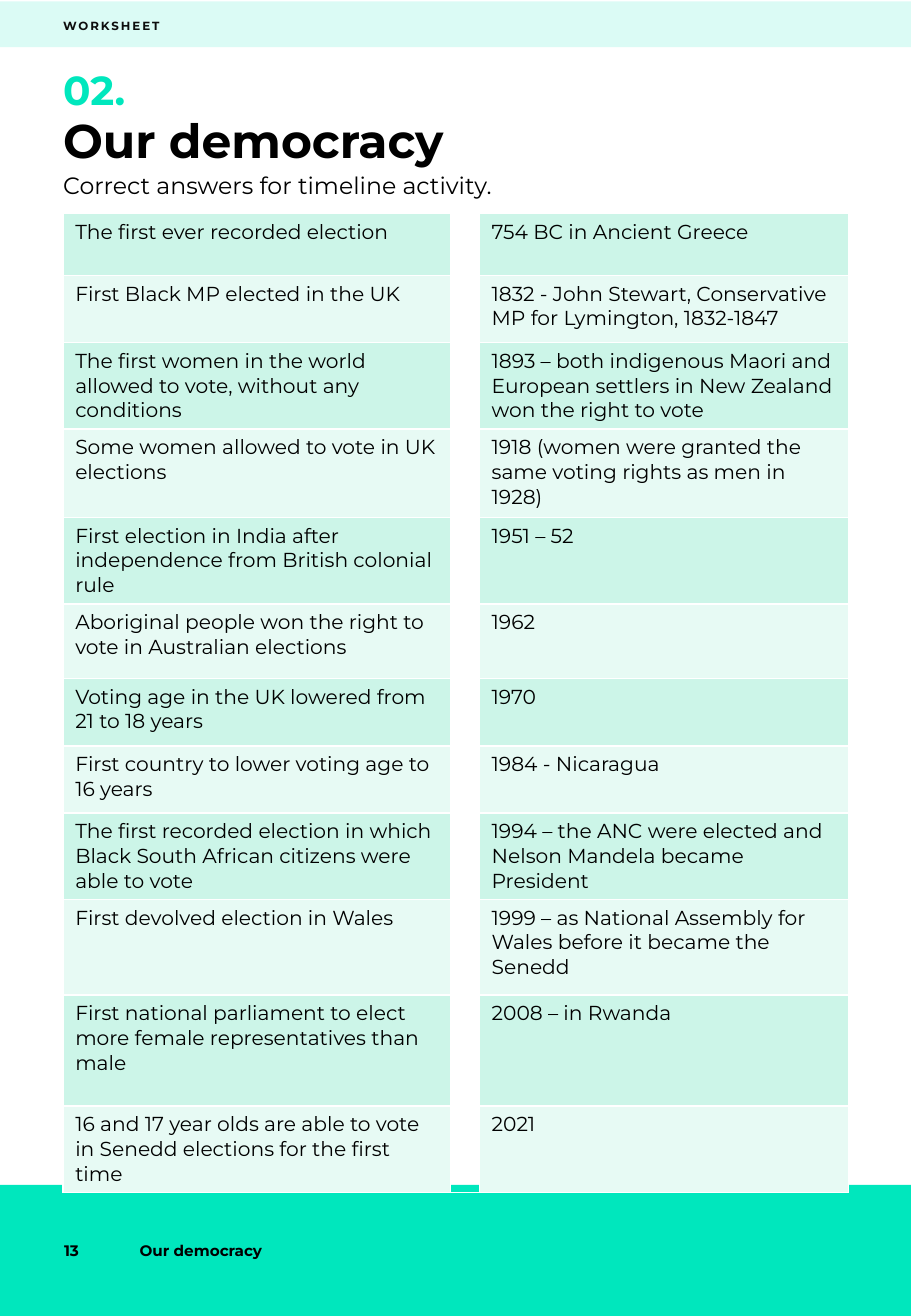
from dataclasses import dataclass

from lxml.etree import SubElement
from pptx import Presentation
from pptx.dml.color import RGBColor
from pptx.enum.shapes import MSO_SHAPE
from pptx.enum.text import MSO_ANCHOR, MSO_AUTO_SIZE, PP_ALIGN
from pptx.oxml.ns import qn
from pptx.util import Cm, Pt

FONT = "Montserrat"
GREEN, BLACK, WHITE = "00E7BD", "000000", "FFFFFF"
ROW_FILLS = ("CCF5E8", "E7FAF4")
PAGE_W, PAGE_H = 19.05, 27.53
MARGIN, CONTENT_W = 1.32, 16.41
FOOTER_TOP, FOOTER_H = 24.79, 2.74
TABLE_TOP = 4.47
COLUMN_WIDTHS = (8.1, 0.58, 7.72)


@dataclass
class Label:
    text: str
    left: float
    top: float
    width: float
    height: float
    size: float
    color: str = BLACK
    bold: bool = True
    anchor: MSO_ANCHOR = MSO_ANCHOR.TOP
    inset: float = 0
    spacing: float = 0


@dataclass
class Event:
    question: str
    answer: str
    height: float


TITLE = Label("Our democracy", MARGIN, 2.46, CONTENT_W, 2.24, 28)
LABELS = [
    Label("WORKSHEET", MARGIN, 0.18, 6.86, 0.71, 7, "0D0D0D",
          anchor=MSO_ANCHOR.MIDDLE, spacing=1.2),
    Label("02.", MARGIN, 1.37, CONTENT_W, 0.94, 24, GREEN),
    Label("Correct answers for timeline activity.", MARGIN, 3.58, CONTENT_W, 1.78, 14, bold=False),
    Label("13", 1.09, FOOTER_TOP, 1.57, FOOTER_H, 9, anchor=MSO_ANCHOR.MIDDLE, inset=0.25),
    Label("Our democracy", 2.67, FOOTER_TOP, 7.04, FOOTER_H, 9,
          anchor=MSO_ANCHOR.MIDDLE, inset=0.25),
]
EVENTS = [
    Event("The first ever recorded election", "754 BC in Ancient Greece", 1.29),
    Event("First Black MP elected in the UK",
          "1832 - John Stewart, Conservative MP for Lymington, 1832-1847", 1.41),
    Event("The first women in the world allowed to vote, without any conditions",
          "1893 – both indigenous Maori and European settlers in New Zealand won the right to vote",
          1.8),
    Event("Some women allowed to vote in UK elections",
          "1918 (women were granted the same voting rights as men in 1928)", 1.85),
    Event("First election in India after independence from British colonial rule",
          "1951 – 52", 1.8),
    Event("Aboriginal people won the right to vote in Australian elections", "1962", 1.56),
    Event("Voting age in the UK lowered from 21 to 18 years", "1970", 1.41),
    Event("First country to lower voting age to 16 years", "1984 - Nicaragua", 1.41),
    Event("The first recorded election in which Black South African citizens were able to vote",
          "1994 – the ANC were elected and Nelson Mandela became President", 1.8),
    Event("First devolved election in Wales",
          "1999 – as National Assembly for Wales before it became the Senedd", 2.0),
    Event("First national parliament to elect more female representatives than male",
          "2008 – in Rwanda", 2.32),
    Event("16 and 17 year olds are able to vote in Senedd elections for the first time",
          "2021", 1.8),
]


def rgb(color: str) -> RGBColor:
    return RGBColor.from_string(color)


def add_run(p, text: str, size: float, color: str = BLACK, bold: bool = False):
    r = p.add_run()
    r.text = text
    r.font.name = FONT
    r.font.size = Pt(size)
    r.font.bold = bold
    r.font.color.rgb = rgb(color)
    return r


def add_band(slide, top: float, height: float, opacity: int = 100) -> None:
    """Draw a green band across the page."""
    sp = slide.shapes.add_shape(MSO_SHAPE.RECTANGLE, 0, Cm(top), Cm(PAGE_W), Cm(height))
    sp.shadow.inherit = False
    sp.fill.solid()
    sp.fill.fore_color.rgb = rgb(GREEN)
    sp.line.fill.background()
    if opacity < 100:
        clr = sp.fill._xPr.find(qn("a:solidFill")).find(qn("a:srgbClr"))
        SubElement(clr, qn("a:alpha"), val=str(opacity * 1000))


def fill_label(sp, label: Label) -> None:
    """Place a text shape and write the label in it."""
    sp.left, sp.top = Cm(label.left), Cm(label.top)
    sp.width, sp.height = Cm(label.width), Cm(label.height)
    tf = sp.text_frame
    tf.word_wrap = True
    tf.auto_size = MSO_AUTO_SIZE.NONE
    tf.vertical_anchor = label.anchor
    tf.margin_left = tf.margin_right = Cm(label.inset)
    tf.margin_top = tf.margin_bottom = Cm(label.inset / 2)
    p = tf.paragraphs[0]
    p.alignment = PP_ALIGN.LEFT
    r = add_run(p, label.text, label.size, label.color, label.bold)
    if label.spacing:
        r.font._element.set("spc", str(round(label.spacing * 100)))


def add_borders(cell) -> None:
    """Give a cell 1 pt white borders; must run before its fill is set."""
    tc_pr = cell._tc.get_or_add_tcPr()
    for side in ("lnL", "lnR", "lnT", "lnB"):
        ln = SubElement(tc_pr, qn(f"a:{side}"), w=str(Pt(1)))
        SubElement(SubElement(ln, qn("a:solidFill")), qn("a:srgbClr"), val=WHITE)


def add_timeline(slide, events: list[Event]) -> None:
    height = sum(event.height for event in events)
    table = slide.shapes.add_table(len(events), len(COLUMN_WIDTHS), Cm(MARGIN), Cm(TABLE_TOP),
                                   Cm(sum(COLUMN_WIDTHS)), Cm(height)).table
    table.first_row = table.horz_banding = False
    for column, width in zip(table.columns, COLUMN_WIDTHS):
        column.width = Cm(width)
    for i, event in enumerate(events):
        table.rows[i].height = Cm(event.height)
        for j, text in enumerate((event.question, "", event.answer)):
            cell = table.cell(i, j)
            add_borders(cell)
            if text:
                cell.fill.solid()
                cell.fill.fore_color.rgb = rgb(ROW_FILLS[i % 2])
                add_run(cell.text_frame.paragraphs[0], text, 12)
            else:
                cell.fill.background()


def main() -> None:
    prs = Presentation()
    prs.slide_width, prs.slide_height = Cm(PAGE_W), Cm(PAGE_H)
    slide = prs.slides.add_slide(prs.slide_layouts[5])
    add_band(slide, FOOTER_TOP, FOOTER_H)
    add_band(slide, 0.03, 0.96, opacity=14)
    fill_label(slide.shapes.title, TITLE)
    slide.shapes.title.text_frame.paragraphs[0].line_spacing = 0.9
    for label in LABELS:
        fill_label(slide.shapes.add_textbox(0, 0, 0, 0), label)
    add_timeline(slide, EVENTS)
    prs.save("out.pptx")


if __name__ == "__main__":
    main()
